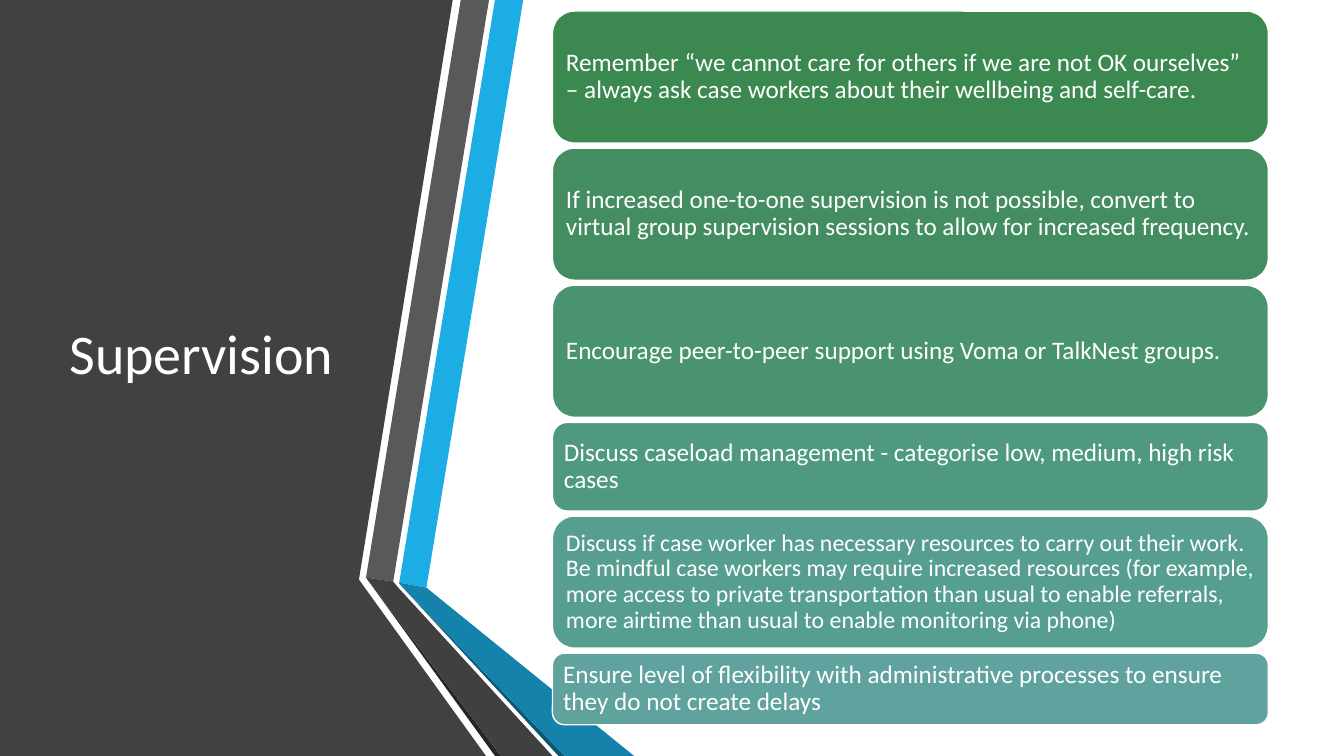
from typing import NamedTuple

from pptx import Presentation
from pptx.dml.color import RGBColor
from pptx.enum.shapes import MSO_SHAPE
from pptx.enum.text import MSO_ANCHOR, PP_ALIGN
from pptx.util import Inches, Pt

WHITE = RGBColor(0xFF, 0xFF, 0xFF)
PANEL_GREY = RGBColor(0x41, 0x41, 0x41)
BRIGHT_BLUE = RGBColor(0x1C, 0xAD, 0xE4)
MID_BLUE = RGBColor(0x14, 0x82, 0xAB)
DEEP_BLUE = RGBColor(0x0D, 0x56, 0x72)
BAND_GREY = RGBColor(0x59, 0x59, 0x59)
FOLD_GREY = RGBColor(0x40, 0x40, 0x40)
SHADE_GREY = RGBColor(0x26, 0x26, 0x26)
GREEN_1 = RGBColor(0x3B, 0x88, 0x50)
GREEN_2 = RGBColor(0x43, 0x8D, 0x61)
GREEN_3 = RGBColor(0x49, 0x93, 0x71)
GREEN_4 = RGBColor(0x4F, 0x99, 0x82)
GREEN_5 = RGBColor(0x56, 0x9F, 0x90)
GREEN_6 = RGBColor(0x60, 0xA2, 0x9E)

CARD_LEFT, CARD_TOP, CARD_WIDTH, CARD_GAP = 5.48, 0.11, 7.1, 0.05


class Band(NamedTuple):
    color: RGBColor
    points: list[tuple[float, float]]


class Card(NamedTuple):
    text: str
    height: float
    color: RGBColor
    size: int = 18


# Side panel and folded ribbons, from back to front
BANDS = [
    Band(PANEL_GREY, [(0, 0), (4.49, 0), (3.56, 5.75), (4.82, 7.5), (0, 7.5)]),
    Band(BRIGHT_BLUE, [(3.96, 5.78), (4.23, 5.83), (5.19, 0), (4.91, 0)]),
    Band(BAND_GREY, [(4.85, 0), (4.57, 0), (3.63, 5.73), (3.9, 5.77)]),
    Band(SHADE_GREY, [(3.63, 5.73), (4.91, 7.5), (4.97, 7.5)]),
    Band(DEEP_BLUE, [(3.96, 5.79), (5.54, 7.5), (5.6, 7.5)]),
    Band(MID_BLUE, [(3.96, 5.78), (3.96, 5.79), (5.6, 7.5), (6.29, 7.5), (4.23, 5.83)]),
    Band(FOLD_GREY, [(5.48, 7.5), (3.95, 5.83), (3.9, 5.77), (3.63, 5.73), (4.97, 7.5)]),
]

CARDS = [
    Card("Remember “we cannot care for others if we are not OK ourselves” – "
         "always ask case workers about their wellbeing and self-care.", 1.31, GREEN_1),
    Card("If increased one-to-one supervision is not possible, convert to virtual "
         "group supervision sessions to allow for increased frequency.", 1.31, GREEN_2),
    Card("Encourage peer-to-peer support using Voma or TalkNest groups.", 1.31, GREEN_3),
    Card("Discuss caseload management - categorise low, medium, high risk cases",
         0.88, GREEN_4),
    Card("Discuss if case worker has necessary resources to carry out their work. "
         "Be mindful case workers may require increased resources (for example, more "
         "access to private transportation than usual to enable referrals, more airtime "
         "than usual to enable monitoring via phone)", 1.31, GREEN_5, 17),
    Card("Ensure level of flexibility with administrative processes to ensure they do "
         "not create delays", 0.71, GREEN_6),
]


def write_text(box, text: str, *, size: int, inset_x: float, inset_y: float) -> None:
    frame = box.text_frame
    frame.word_wrap = True
    frame.vertical_anchor = MSO_ANCHOR.MIDDLE
    frame.margin_left = frame.margin_right = Inches(inset_x)
    frame.margin_top = frame.margin_bottom = Inches(inset_y)
    para = frame.paragraphs[0]
    para.alignment = PP_ALIGN.LEFT
    para.line_spacing = 0.9
    span = para.add_run()
    span.text = text
    span.font.name = "Calibri"
    span.font.size = Pt(size)
    span.font.color.rgb = WHITE


def draw_band(page, band: Band) -> None:
    start, *rest = [(Inches(x), Inches(y)) for x, y in band.points]
    builder = page.shapes.build_freeform(*start)
    builder.add_line_segments(rest, close=True)
    shape = builder.convert_to_shape()
    shape.shadow.inherit = False
    shape.fill.solid()
    shape.fill.fore_color.rgb = band.color
    shape.line.fill.background()


def draw_card(page, card: Card, top: float) -> None:
    box = page.shapes.add_shape(
        MSO_SHAPE.ROUNDED_RECTANGLE, Inches(CARD_LEFT), Inches(top),
        Inches(CARD_WIDTH), Inches(card.height))
    box.shadow.inherit = False
    box.fill.solid()
    box.fill.fore_color.rgb = card.color
    box.line.color.rgb = WHITE
    box.line.width = Pt(1)
    write_text(box, card.text, size=card.size, inset_x=0.07, inset_y=0.07)


def main() -> None:
    deck = Presentation()
    deck.slide_width, deck.slide_height = Inches(13.33), Inches(7.5)
    page = deck.slides.add_slide(deck.slide_layouts[6])

    for band in BANDS:
        draw_band(page, band)

    # Title on the dark panel
    title = page.shapes.add_textbox(Inches(0.59), Inches(0.75), Inches(3.04), Inches(5.58))
    write_text(title, "Supervision", size=40, inset_x=0.1, inset_y=0.05)

    # Stack of advice cards
    top = CARD_TOP
    for card in CARDS:
        draw_card(page, card, top)
        top += card.height + CARD_GAP

    deck.save("out.pptx")


if __name__ == "__main__":
    main()
